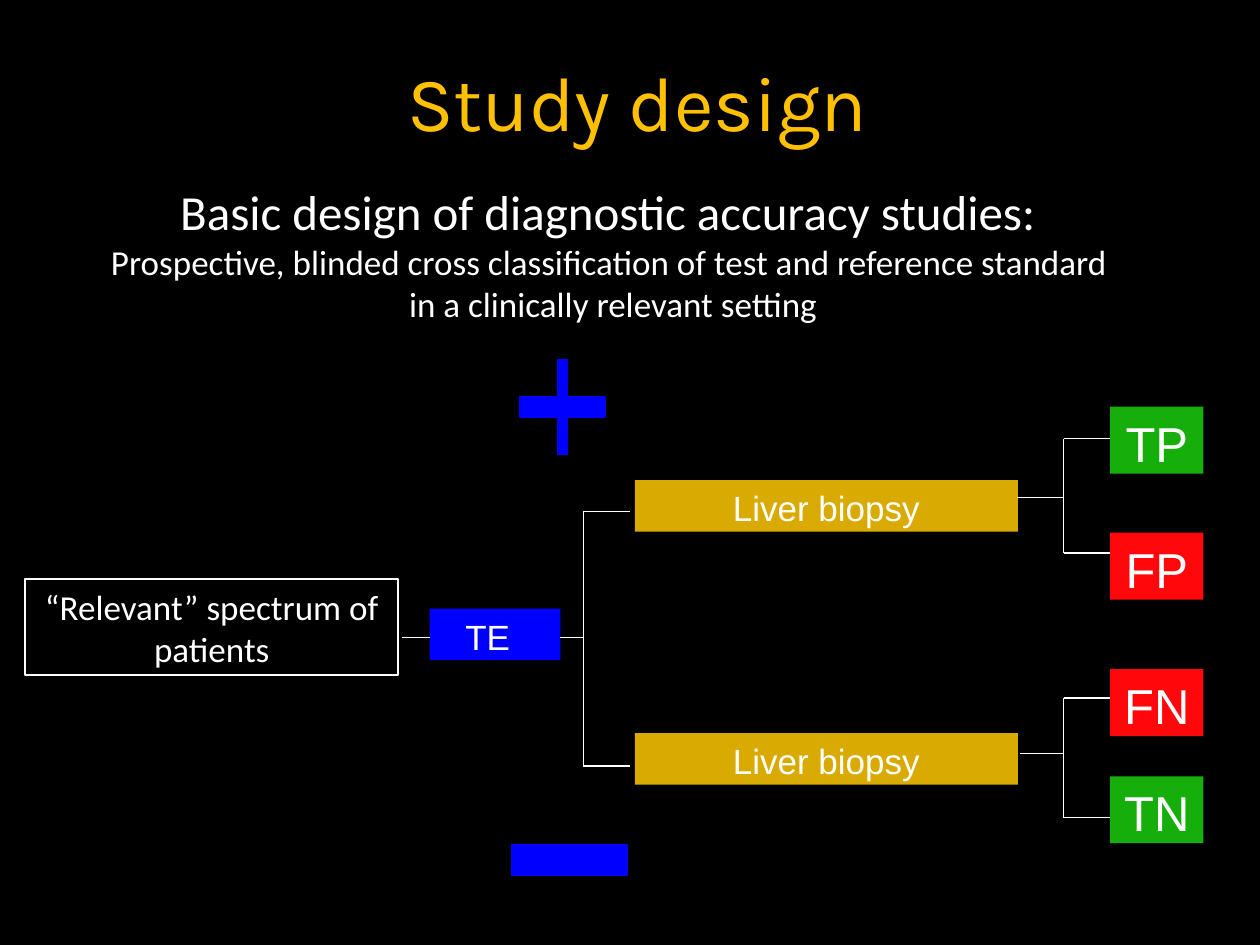
from dataclasses import dataclass
from typing import NamedTuple, Optional

from lxml.etree import SubElement
from pptx import Presentation
from pptx.dml.color import RGBColor as Rgb
from pptx.enum.shapes import MSO_CONNECTOR as Link, MSO_SHAPE as Preset
from pptx.enum.text import MSO_ANCHOR as Anchor, MSO_AUTO_SIZE as Fit, PP_ALIGN as Align
from pptx.oxml.ns import qn
from pptx.shapes.autoshape import Shape
from pptx.slide import Slide
from pptx.util import Cm, Pt


@dataclass(frozen=True)
class Theme:
    """Colours, fonts and type sizes of the slide."""
    ground: Rgb = Rgb(0, 0, 0)
    white: Rgb = Rgb(0xFF, 0xFF, 0xFF)
    amber: Rgb = Rgb(0xFF, 0xC0, 0x00)
    gold: Rgb = Rgb(0xD9, 0xAA, 0x02)
    blue: Rgb = Rgb(0x00, 0x00, 0xFF)
    green: Rgb = Rgb(0x15, 0xAE, 0x0A)
    red: Rgb = Rgb(0xFF, 0x07, 0x0B)
    title_font: str = "Karla"
    prose_font: str = "Calibri"
    label_font: str = "Arial"
    title_size: int = 44
    large: int = 28
    normal: int = 20
    stroke: int = 1
    inset: float = 0.13


THEME = Theme()


class Area(NamedTuple):
    """Left, top, width and height in centimetres."""
    left: float
    top: float
    width: float
    height: float


class Line(NamedTuple):
    """One paragraph of text with its type."""
    text: str
    size: int
    font: str
    colour: Rgb = THEME.white
    before: int = 0
    align: Align = Align.CENTER


@dataclass(frozen=True)
class Box:
    """A rectangle of the diagram with its label."""
    area: Area
    label: Line
    fill: Optional[Rgb] = None
    border: Optional[Rgb] = None
    indent: float = 0


@dataclass(frozen=True)
class Fork:
    """A branching from one box to an upper and a lower one."""
    root: float
    spine: float
    tip: float
    upper: float
    stem: float
    lower: float


def write(holder: Shape, lines: list[Line], indent: float = 0) -> None:
    """Fill a shape with paragraphs."""
    frame = holder.text_frame
    frame.word_wrap = True
    frame.auto_size = Fit.SHAPE_TO_FIT_TEXT
    frame.vertical_anchor = Anchor.TOP
    frame.margin_left = Cm(THEME.inset + indent)
    frame.margin_top = frame.margin_right = frame.margin_bottom = Cm(THEME.inset)
    for index, line in enumerate(lines):
        paragraph = frame.add_paragraph() if index else frame.paragraphs[0]
        paragraph.alignment = line.align
        paragraph.space_before = Pt(line.before)
        run = paragraph.add_run()
        run.text = line.text
        run.font.size = Pt(line.size)
        run.font.name = line.font
        run.font.color.rgb = line.colour


def add_text(slide: Slide, area: Area, lines: list[Line]) -> Shape:
    """Place free text on the slide."""
    holder = slide.shapes.add_textbox(*map(Cm, area))
    write(holder, lines)
    return holder


def add_figure(slide: Slide, preset: Preset, area: Area,
               fill: Optional[Rgb], border: Optional[Rgb]) -> Shape:
    """Draw a flat preset shape."""
    figure = slide.shapes.add_shape(preset, *map(Cm, area))
    figure.shadow.inherit = False
    if fill is None:
        figure.fill.background()
    else:
        figure.fill.solid()
        figure.fill.fore_color.rgb = fill
    if border is None:
        figure.line.fill.background()
    else:
        figure.line.color.rgb = border
        figure.line.width = Pt(THEME.stroke)
    return figure


def add_box(slide: Slide, box: Box) -> None:
    """Draw a labelled box."""
    figure = add_figure(slide, Preset.RECTANGLE, box.area, box.fill, box.border)
    write(figure, [box.label], box.indent)


def add_line(slide: Slide, x1: float, y1: float, x2: float, y2: float) -> None:
    """Draw a thin white line."""
    link = slide.shapes.add_connector(Link.STRAIGHT, Cm(x1), Cm(y1), Cm(x2), Cm(y2))
    link.line.color.rgb = THEME.white
    link.line.width = Pt(THEME.stroke)
    SubElement(link.element.spPr, qn("a:effectLst"))


def add_fork(slide: Slide, fork: Fork) -> None:
    """Draw the stem, the spine and both branches of a fork."""
    add_line(slide, fork.root, fork.stem, fork.spine, fork.stem)
    add_line(slide, fork.spine, fork.upper, fork.spine, fork.lower)
    for level in (fork.upper, fork.lower):
        add_line(slide, fork.spine, level, fork.tip, level)


PATIENTS = Box(Area(0.51, 11.68, 7.52, 1.93),
               Line("“Relevant” spectrum of patients", THEME.normal, THEME.prose_font, before=12),
               border=THEME.white)
INDEX_TEST = Box(Area(8.66, 12.27, 2.64, 1.04),
                 Line("TE", THEME.normal, THEME.label_font, before=12, align=Align.LEFT),
                 fill=THEME.blue, indent=0.59)
BIOPSIES = [Box(Area(12.8, top, 7.72, 1.04),
                Line("Liver biopsy", THEME.normal, THEME.label_font, before=12), fill=THEME.gold)
            for top in (9.68, 14.78)]
OUTCOMES = [Box(Area(22.38, top, 1.88, 1.35),
                Line(label, THEME.large, THEME.label_font, before=16), fill=fill)
            for label, top, fill in (("TP", 8.2, THEME.green), ("FP", 10.74, THEME.red),
                                     ("FN", 13.49, THEME.red), ("TN", 15.65, THEME.green))]
FORKS = [Fork(11.28, 11.76, 12.7, 10.31, 12.85, 15.44),
         Fork(20.5, 21.44, 22.38, 8.84, 10.03, 11.15),
         Fork(20.57, 21.44, 22.38, 14.07, 15.19, 16.48)]
SUMMARY = [
    Line("Basic design of diagnostic accuracy studies: ", THEME.large, THEME.prose_font),
    Line("Prospective, blinded cross classification of test and reference standard ",
         THEME.normal, THEME.prose_font),
    Line("in a clinically relevant setting", THEME.normal, THEME.prose_font),
]


def main() -> None:
    """Build the study design slide."""
    deck = Presentation()
    deck.slide_width, deck.slide_height = Cm(25.4), Cm(19.05)
    slide = deck.slides.add_slide(deck.slide_layouts[6])
    slide.background.fill.solid()
    slide.background.fill.fore_color.rgb = THEME.ground

    for box in (PATIENTS, INDEX_TEST, *BIOPSIES, *OUTCOMES):
        add_box(slide, box)
    add_line(slide, 8.1, 12.85, 8.66, 12.85)
    for fork in FORKS:
        add_fork(slide, fork)

    positive = add_figure(slide, Preset.CROSS, Area(10.49, 7.26, 1.7, 1.9), THEME.blue, THEME.blue)
    positive.adjustments[0] = 0.44
    add_figure(slide, Preset.RECTANGLE, Area(10.31, 17.04, 2.34, 0.61), THEME.blue, THEME.blue)

    add_text(slide, Area(0.51, 3.53, 23.7, 3.02), SUMMARY)
    title = add_text(slide, Area(1.5, 0.91, 22.71, 2.26),
                     [Line("Study design", THEME.title_size, THEME.title_font, THEME.amber)])
    title.text_frame.auto_size = Fit.NONE
    title.text_frame.vertical_anchor = Anchor.MIDDLE
    deck.save("out.pptx")


if __name__ == "__main__":
    main()
